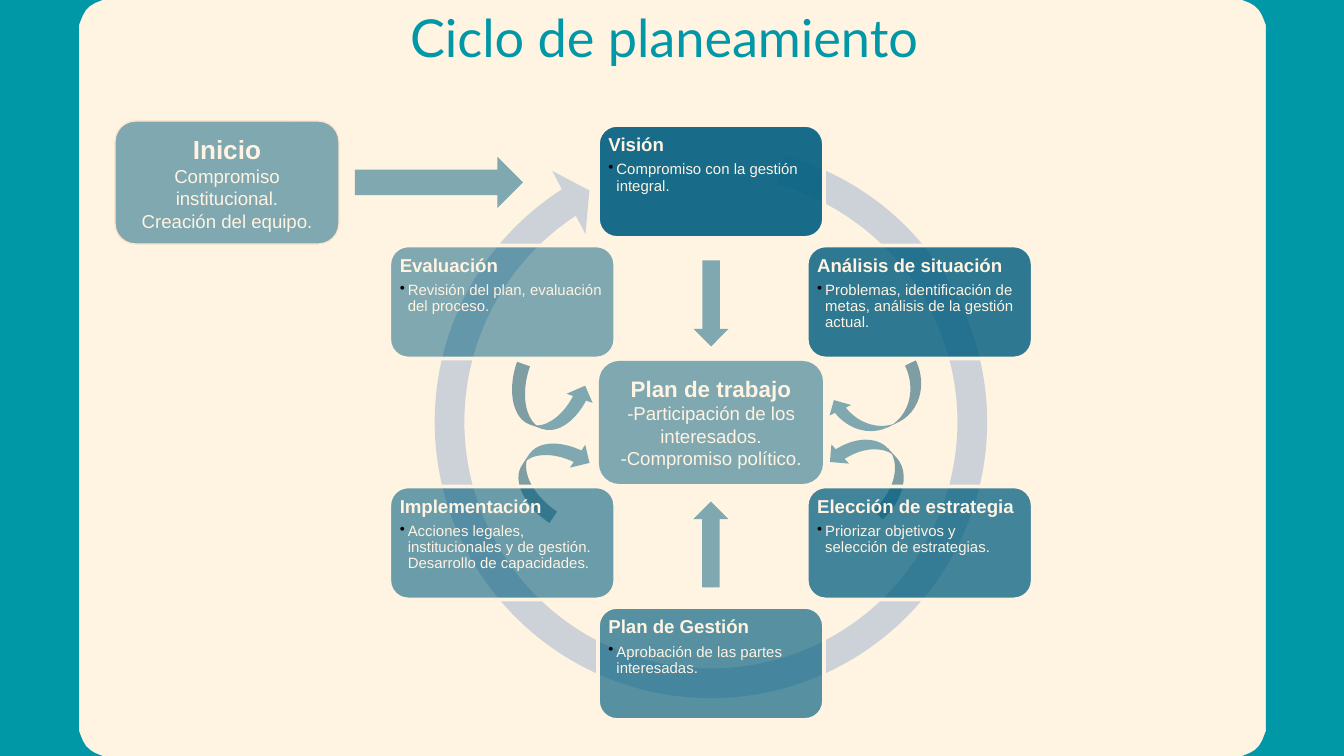
from math import cos, pi, radians, sin

from lxml.etree import SubElement
from pptx import Presentation
from pptx.dml.color import RGBColor
from pptx.enum.shapes import MSO_SHAPE
from pptx.enum.text import MSO_ANCHOR, PP_ALIGN
from pptx.oxml.ns import qn
from pptx.util import Pt

PX = 914400 / 134.4  # EMU in one px
WIDTH, HEIGHT = 1344, 756

TEAL = RGBColor(0x00, 0x97, 0xA7)
BLUE = RGBColor(0x00, 0x5E, 0x80)
CREAM = RGBColor(0xFF, 0xF3, 0xE2)
PEACH = RGBColor(0xFF, 0xE5, 0xCC)
RING = RGBColor(0xCC, 0xD2, 0xD8)


def emu(px):
    return round(px * PX)


class CycleSlide:
    """Style and drawing methods for the current slide."""

    body_font = "Arial"
    title_font = "Lato"

    def __init__(self, slide):
        self.slide = slide
        slide.background.fill.solid()
        slide.background.fill.fore_color.rgb = CREAM

    def paint(self, shape, color, opacity=100, line=None, line_width=1):
        shape.shadow.inherit = False
        shape.fill.solid()
        shape.fill.fore_color.rgb = color
        if opacity < 100:
            rgb = shape._element.spPr.find(qn("a:solidFill")).find(qn("a:srgbClr"))
            SubElement(rgb, qn("a:alpha"), val=str(opacity * 1000))
        if line is None:
            shape.line.fill.background()
        else:
            shape.line.color.rgb = line
            shape.line.width = Pt(line_width)

    def run(self, paragraph, text, size, color=CREAM, bold=False, font=body_font):
        run = paragraph.add_run()
        run.text = text
        run.font.size = Pt(size)
        run.font.name = font
        run.font.bold = bold
        run.font.color.rgb = color

    def title(self, text, left, top, width, height):
        title = self.slide.shapes.title
        title.left, title.top = emu(left), emu(top)
        title.width, title.height = emu(width), emu(height)
        frame = title.text_frame
        frame.vertical_anchor = MSO_ANCHOR.MIDDLE
        paragraph = frame.paragraphs[0]
        paragraph.alignment = PP_ALIGN.CENTER
        paragraph.line_spacing = 0.8
        self.run(paragraph, text, 28, TEAL, font=self.title_font)

    def side_band(self, points):
        builder = self.slide.shapes.build_freeform(*points[0], scale=PX)
        builder.add_line_segments(points[1:], close=True)
        self.paint(builder.convert_to_shape(), TEAL)

    def shape(self, kind, left, top, width, height, color=BLUE, opacity=50,
              rotation=0, flip=None, adjustments=(), **line):
        shape = self.slide.shapes.add_shape(
            kind, emu(left), emu(top), emu(width), emu(height))
        for index, value in enumerate(adjustments):
            shape.adjustments[index] = value
        shape.rotation = rotation
        if flip:
            shape._element.spPr.xfrm.set(flip, "1")
        self.paint(shape, color, opacity, **line)
        return shape

    def centred_box(self, left, top, heading, heading_size, lines, **line):
        box = self.shape(MSO_SHAPE.ROUNDED_RECTANGLE, left, top, 224, 123, **line)
        frame = box.text_frame
        frame.word_wrap = True
        frame.vertical_anchor = MSO_ANCHOR.MIDDLE
        paragraph = frame.paragraphs[0]
        paragraph.alignment = PP_ALIGN.CENTER
        self.run(paragraph, heading, heading_size, bold=True)
        for text in lines:
            paragraph = frame.add_paragraph()
            paragraph.alignment = PP_ALIGN.CENTER
            self.run(paragraph, text, 10)

    def stage(self, left, top, heading, detail, opacity):
        box = self.shape(MSO_SHAPE.ROUNDED_RECTANGLE, left, top, 226, 113,
                         opacity=opacity, line=CREAM, line_width=2)
        frame = box.text_frame
        frame.word_wrap = True
        frame.vertical_anchor = MSO_ANCHOR.TOP
        frame.margin_left = frame.margin_right = emu(5)
        frame.margin_top = frame.margin_bottom = emu(5)
        name, bullet = frame.paragraphs[0], frame.add_paragraph()
        for paragraph, gap in ((name, 3.5), (bullet, 1.2)):
            paragraph.alignment = PP_ALIGN.LEFT
            paragraph.line_spacing = 0.9
            paragraph.space_after = Pt(gap)
        self.run(name, heading, 10, bold=True)
        self.run(bullet, detail, 8)
        # Black bullet with a hanging indent
        bullet.level = 1
        properties = bullet._p.get_or_add_pPr()
        properties.set("marL", str(emu(8)))
        properties.set("indent", str(-emu(8)))
        color = SubElement(properties, qn("a:buClr"))
        SubElement(color, qn("a:srgbClr"), val="000000")
        SubElement(properties, qn("a:buChar"), char="•")


STAGES = [
    ("Visión", "Compromiso con la gestión integral."),
    ("Análisis de situación",
     "Problemas, identificación de metas, análisis de la gestión actual."),
    ("Elección de estrategia", "Priorizar objetivos y selección de estrategias."),
    ("Plan de Gestión", "Aprobación de las partes interesadas."),
    ("Implementación",
     "Acciones legales, institucionales y de gestión. Desarrollo de capacidades."),
    ("Evaluación", "Revisión del plan, evaluación del proceso."),
]


def main():
    deck = Presentation()
    deck.slide_width, deck.slide_height = emu(WIDTH), emu(HEIGHT)
    cycle = CycleSlide(deck.slides.add_slide(deck.slide_layouts[5]))

    # Side bands with rounded inner corners
    radius, edge, top, bottom = 32, 79, -1, 757
    angles = [radians(step * 10) for step in range(10)]
    upper = [(edge + radius * (1 - sin(a)), top + radius * (1 - cos(a)))
             for a in angles]
    lower = [(x, top + bottom - y) for x, y in reversed(upper)]
    left_band = [(0, bottom), (0, top)] + upper + lower
    cycle.side_band(left_band)
    cycle.side_band([(WIDTH + 1 - x, y) for x, y in left_band])

    cycle.title("Ciclo de planeamiento", 99, 9, 1130, 66)

    # Lower curved arrows, behind the ring
    curved = MSO_SHAPE.CURVED_LEFT_ARROW
    cycle.shape(curved, 523, 429, 55, 86, rotation=213.7)
    cycle.shape(curved, 845, 423, 52, 91, rotation=317.5, flip="flipV")

    # Ring and the six stages, placed on a hexagon
    cycle.shape(MSO_SHAPE.CIRCULAR_ARROW, 414, 125, 594, 594, RING, 100,
                adjustments=(0.05, 3.13, 142.25, 171.29, 0.06))
    centre_x, centre_y, distance = 711, 422, 241
    for index, (heading, detail) in enumerate(STAGES):
        angle = index * pi / 3
        cycle.stage(centre_x + distance * sin(angle) - 113,
                    centre_y - distance * cos(angle) - 56,
                    heading, detail, 90 - 8 * index)

    # Work plan and the arrows that lead to it
    cycle.centred_box(599, 361, "Plan de trabajo", 12,
                      ["-Participación de los interesados.",
                       "-Compromiso político."])
    for arrow_top, rotation in ((286, 90), (527, 270)):
        cycle.shape(MSO_SHAPE.RIGHT_ARROW, 668, arrow_top, 86, 35,
                    rotation=rotation)
    cycle.shape(curved, 856, 353, 48, 103, rotation=64.1)
    cycle.shape(curved, 521, 359, 55, 86, rotation=289.4, flip="flipH")

    # Starting point
    cycle.centred_box(115, 121, "Inicio", 14,
                      ["Compromiso institucional.", "Creación del equipo."],
                      line=PEACH, line_width=0.75)
    cycle.shape(MSO_SHAPE.RIGHT_ARROW, 355, 157, 168, 51)

    deck.save("out.pptx")


if __name__ == "__main__":
    main()
